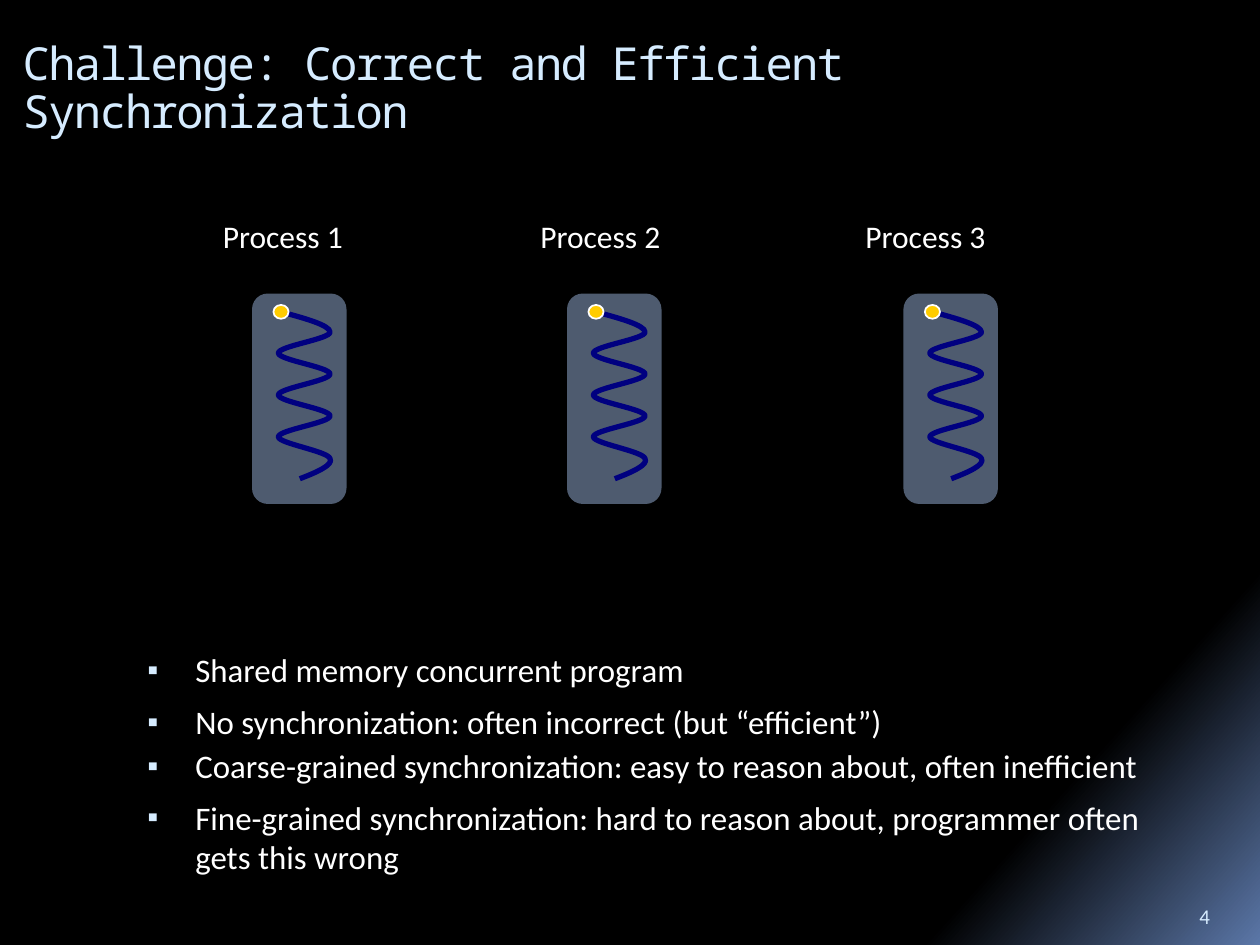
from lxml import etree
from pptx import Presentation
from pptx.dml.color import RGBColor
from pptx.enum import shapes, text
from pptx.oxml.ns import qn
from pptx.util import Inches, Pt

COLORS = {
    "black": "000000",
    "glow": "5B77A8",
    "title": "D6ECFF",
    "text": "FFFFFF",
    "process": "4E5B6F",
    "thread": "000080",
    "marker": "FFCC00",
}
BODY_FONT = "Calibri"
TITLE_FONT = "Noto Sans Mono"

# (label, label left, box left)
PROCESSES = [
    ("Process 1", 1.67, 2),
    ("Process 2", 4.19, 4.5),
    ("Process 3", 6.77, 7.17),
]
# (bullet text, line spacing)
BULLETS = [
    ("Shared memory concurrent program", 0.8),
    ("No synchronization: often incorrect (but “efficient”)", 1.0),
    ("Coarse-grained synchronization: easy to reason about, often inefficient", 0.8),
    ("Fine-grained synchronization: hard to reason about, "
     "programmer often gets this wrong", 1.0),
]


def color(name):
    return RGBColor.from_string(COLORS[name])


def thread_points(left, top):
    """Bezier points of a thread: six half-waves, then a short tail."""
    swing, step = 0.41, 1.33 / 24
    points = [(0, 0), (swing / 2, step), (swing, 2 * step), (swing, 3 * step)]
    for half_wave in range(1, 6):
        start, end = (swing, 0) if half_wave % 2 else (0, swing)
        row = 3 * half_wave
        points += [(start, (row + 1) * step), (end, (row + 2) * step),
                   (end, (row + 3) * step)]
    points += [(swing, 19 * step), (0, 20 * step), (0, 18 * step)][:0]
    points += [(0, 16 * step), (0, 17 * step), (0, 18 * step)][:0]
    return [(left + x, top + y) for x, y in points]


class SlideBuilder:
    def __init__(self, presentation):
        self.slide = presentation.slides.add_slide(presentation.slide_layouts[1])

    def background(self):
        fill = self.slide.background.fill
        fill.gradient()
        fill.gradient_angle = 318
        for stop, position, name in zip(fill.gradient_stops, (0.84, 1), ("black", "glow")):
            stop.position = position
            stop.color.rgb = color(name)

    def add_run(self, paragraph, content, size, name="text", font=BODY_FONT):
        run = paragraph.add_run()
        run.text = content
        run.font.size = Pt(size)
        run.font.name = font
        run.font.color.rgb = color(name)
        return run

    def place(self, shape, left, top, width, height):
        shape.left, shape.top = Inches(left), Inches(top)
        shape.width, shape.height = Inches(width), Inches(height)

    def title(self, content):
        shape = self.slide.shapes.title
        self.place(shape, 0.08, 0.25, 9.82, 1.25)
        frame = shape.text_frame
        frame.auto_size = text.MSO_AUTO_SIZE.NONE
        frame.vertical_anchor = text.MSO_ANCHOR.TOP
        frame.margin_top = Inches(0.09)
        paragraph = frame.paragraphs[0]
        paragraph.alignment = text.PP_ALIGN.LEFT
        paragraph.line_spacing = 0.87
        run = self.add_run(paragraph, content, 26, "title", TITLE_FONT)
        run.font._element.set("spc", "-100")

    def bullets(self, items):
        shape = self.slide.placeholders[1]
        self.place(shape, 1, 5.17, 8.5, 1.78)
        frame = shape.text_frame
        frame.auto_size = text.MSO_AUTO_SIZE.NONE
        for index, (content, spacing) in enumerate(items):
            paragraph = frame.add_paragraph() if index else frame.paragraphs[0]
            paragraph.line_spacing = spacing
            paragraph.space_before = Pt(7)
            self.add_run(paragraph, content, 18.8)
            self.mark_bullet(paragraph)

    def mark_bullet(self, paragraph):
        properties = paragraph._p.get_or_add_pPr()
        properties.set("marL", str(Inches(0.45)))
        properties.set("indent", str(Inches(-0.38)))
        bullet_color = etree.SubElement(properties, qn("a:buClr"))
        etree.SubElement(bullet_color, qn("a:srgbClr"), val=COLORS["title"])
        etree.SubElement(properties, qn("a:buSzPct"), val="95000")
        etree.SubElement(properties, qn("a:buChar"), char="▪")

    def label(self, content, left, top, width, size, name="text",
              anchor=text.MSO_ANCHOR.TOP):
        box = self.slide.shapes.add_textbox(
            Inches(left), Inches(top), Inches(width), Inches(0.4))
        frame = box.text_frame
        frame.word_wrap = True
        frame.vertical_anchor = anchor
        self.add_run(frame.paragraphs[0], content, size, name)

    def shape(self, kind, left, top, width, height, fill, line=None):
        shape = self.slide.shapes.add_shape(
            kind, Inches(left), Inches(top), Inches(width), Inches(height))
        shape.shadow.inherit = False
        shape.fill.solid()
        shape.fill.fore_color.rgb = color(fill)
        if line:
            shape.line.color.rgb = color(line)
            shape.line.width = Pt(1)
        else:
            shape.line.fill.background()

    def curve(self, points):
        """Draw a cubic Bezier chain: a start, then three points per segment."""
        start, *rest = [(Inches(x), Inches(y)) for x, y in points]
        builder = self.slide.shapes.build_freeform(*start)
        builder.add_line_segments(rest, close=False)
        shape = builder.convert_to_shape()
        shape.shadow.inherit = False
        shape.fill.background()
        shape.line.color.rgb = color("thread")
        shape.line.width = Pt(3)
        outline = shape._element.xpath(".//a:path")[0]
        segments = outline.findall(qn("a:lnTo"))
        for index in range(0, len(segments), 3):
            bezier = etree.SubElement(outline, qn("a:cubicBezTo"))
            for segment in segments[index:index + 3]:
                bezier.append(segment[0])
                outline.remove(segment)

    def process(self, name, label_left, left):
        kinds = shapes.MSO_SHAPE
        self.label(name, label_left, 1.67, 1.31, 18)
        self.shape(kinds.FLOWCHART_ALTERNATE_PROCESS, left, 2.33, 0.75, 1.67, "process")
        tail = [(0.39, 1.11), (0.42, 1.17), (0.3, 1.28), (0.17, 1.33)]
        thread_left, thread_top = left + 0.21, 2.47
        points = thread_points(thread_left, thread_top)
        points += [(thread_left + x, thread_top + y) for x, y in
                   [(0, 1.05), tail[0], (0.41, 1.17), (0.44, 1.22), (0.3, 1.28), tail[-1]]]
        self.curve(points)
        self.shape(kinds.OVAL, left + 0.17, 2.42, 0.12, 0.11, "marker", "text")


def main():
    presentation = Presentation()
    presentation.slide_width, presentation.slide_height = Inches(10), Inches(7.5)
    builder = SlideBuilder(presentation)
    builder.background()
    builder.title("Challenge: Correct and Efficient Synchronization")
    builder.bullets(BULLETS)
    for process in PROCESSES:
        builder.process(*process)
    builder.label("4", 9.42, 7.02, 0.5, 12, "title", text.MSO_ANCHOR.BOTTOM)
    presentation.save("out.pptx")


if __name__ == "__main__":
    main()
